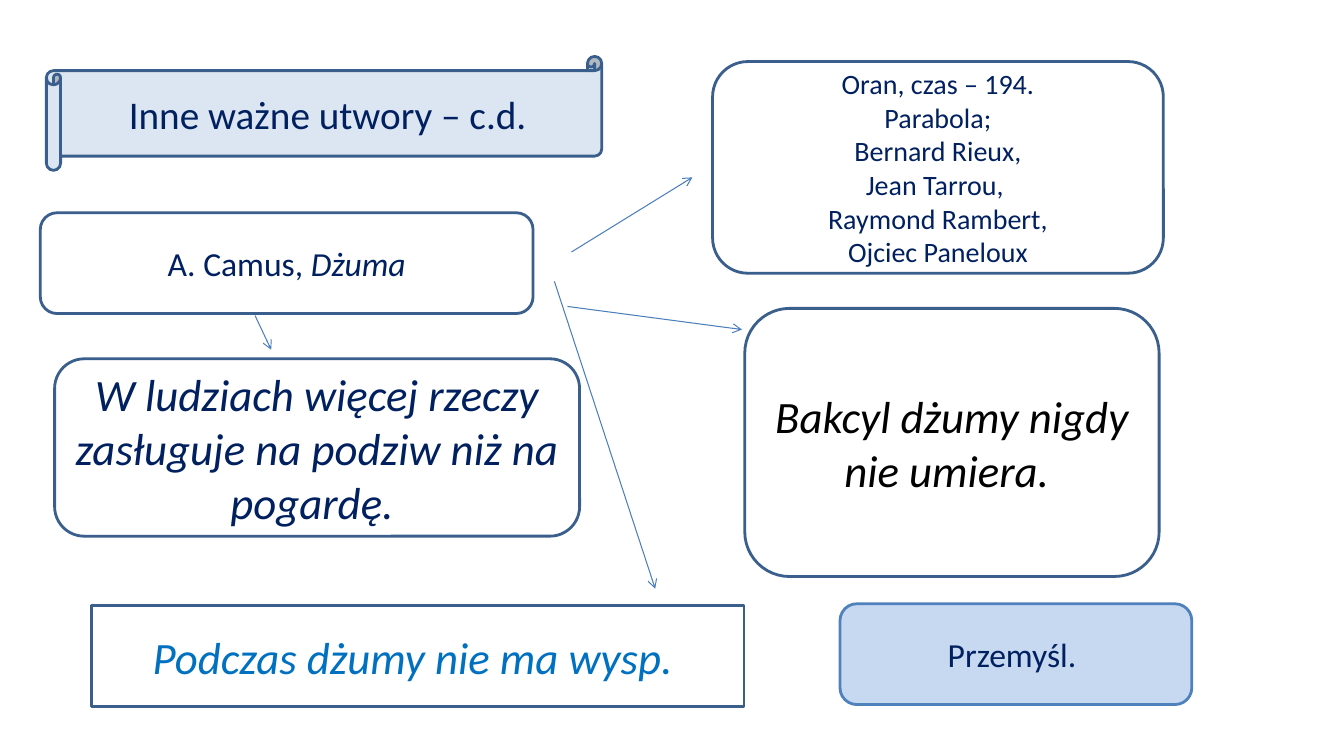
"""Build the slide about Camus's novel: a title scroll, framed notes and arrows."""
from lxml.etree import SubElement
from pptx import Presentation
from pptx.dml.color import RGBColor
from pptx.enum.shapes import MSO_CONNECTOR as CONN, MSO_SHAPE as SHAPE
from pptx.enum.text import MSO_ANCHOR as ANCHOR, PP_ALIGN as ALIGN
from pptx.oxml.ns import qn
from pptx.util import Pt


def paint(fmt, color):
    fmt.solid()
    fmt.fore_color.rgb = RGBColor.from_string(color)


NAVY, BLUE, FRAME, WHITE = "002060", "0070C0", "3A5F8C", "FFFFFF"
SCROLL, ROUND = SHAPE.HORIZONTAL_SCROLL, SHAPE.ROUNDED_RECTANGLE

prs = Presentation()
prs.slide_width, prs.slide_height = Pt(960), Pt(540)
s = prs.slides.add_slide(prs.slide_layouts[6])

characters = ["Oran, czas – 194.", "Parabola;", "Bernard Rieux,", "Jean Tarrou, ",
              "Raymond Rambert,", "Ojciec Paneloux"]
boxes = [
    (SCROLL, (33.1, 40.3, 396.7, 81.4), "DCE6F2", FRAME, 28, NAVY,
     [[("Inne ważne utwory – c.d.", False)]]),
    (ROUND, (28.8, 152, 352, 72), WHITE, FRAME, 24, NAVY,
     [[("A. Camus, ", False), ("Dżuma", True)]]),
    (ROUND, (509, 44, 322, 151.2), WHITE, FRAME, 20, NAVY,
     [[(line, False)] for line in characters]),
    (ROUND, (532, 220.3, 296, 191.5), WHITE, FRAME, 32, "000000",
     [[("Bakcyl dżumy nigdy nie umiera. ", True)]]),
    (ROUND, (39, 256.3, 375, 126.7), WHITE, FRAME, 32, NAVY,
     [[("W ludziach więcej rzeczy zasługuje na podziw niż na pogardę. ", True)]]),
    (SHAPE.RECTANGLE, (65.5, 432.7, 466, 72), WHITE, FRAME, 32, BLUE,
     [[("Podczas dżumy nie ma wysp. ", True)]]),
    (ROUND, (600, 431.3, 251.3, 72), "C6D9F1", "4F81BD", 24, NAVY,
     [[("Przemyśl. ", False)]]),
]
for kind, place, fill, line, size, color, paragraphs in boxes:
    sp = s.shapes.add_shape(kind, *map(Pt, place))
    sp.shadow.inherit = False
    paint(sp.fill, fill)
    paint(sp.line.fill, line)
    sp.line.width = Pt(2)
    tf = sp.text_frame
    tf.word_wrap, tf.vertical_anchor = True, ANCHOR.MIDDLE
    for i, runs in enumerate(paragraphs):
        p = tf.add_paragraph() if i else tf.paragraphs[0]
        p.alignment = ALIGN.CENTER
        for text, italic in runs:
            r = p.add_run()
            r.text = text
            for name, value in {"name": "Calibri", "size": Pt(size), "italic": italic}.items():
                setattr(r.font, name, value)
            paint(r.font.fill, color)

arrows = [
    (408.2, 180, 494.6, 126.7),
    (405.4, 218.9, 530, 235.4),
    (182.2, 225.4, 193.7, 249.8),
    (396, 201, 468, 420.5),
]
for ends in arrows:
    arrow = s.shapes.add_connector(CONN.STRAIGHT, *map(Pt, ends))
    paint(arrow.line.fill, "4B7EBC")
    arrow.line.width = Pt(0.75)
    SubElement(arrow.line._get_or_add_ln(), qn("a:tailEnd"), type="arrow")
    SubElement(arrow._element.spPr, qn("a:effectLst"))

prs.save("out.pptx")
